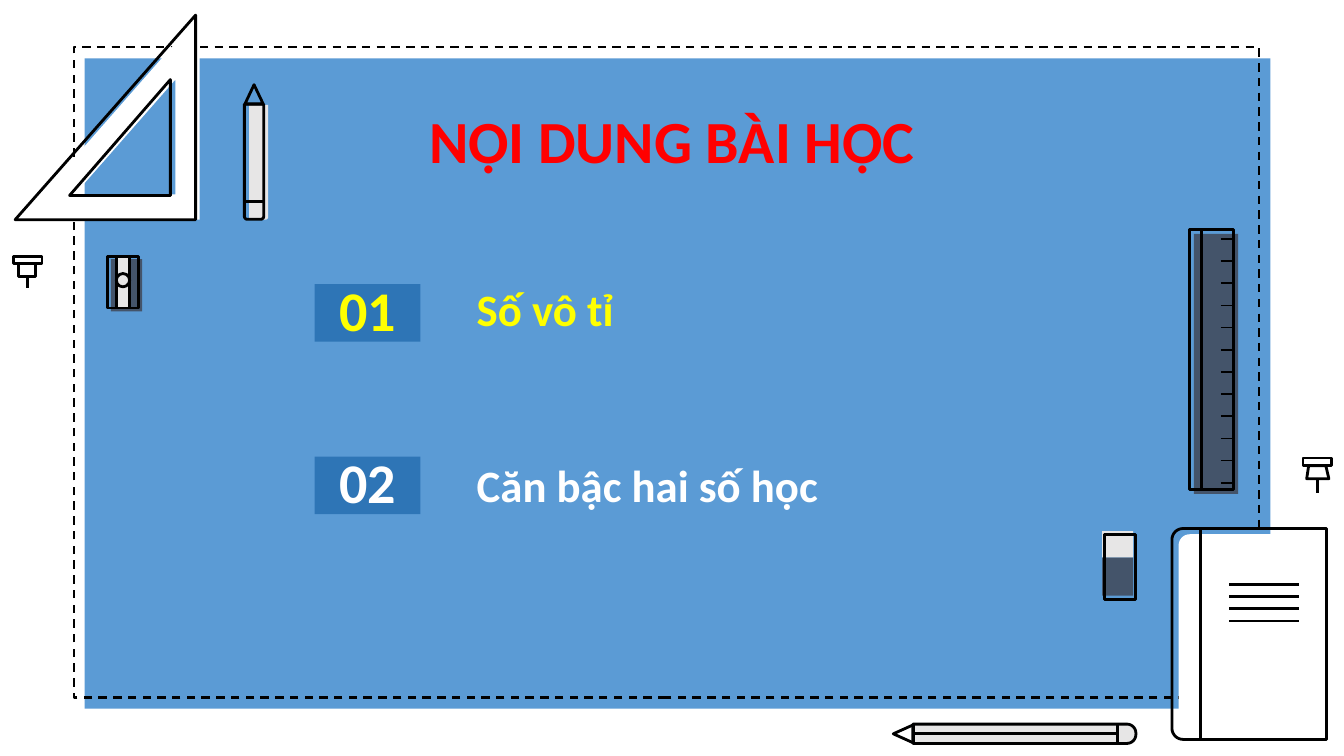
from itertools import chain
from math import cos, pi, sin

from lxml.etree import SubElement
from pptx import Presentation
from pptx.dml.color import RGBColor
from pptx.enum.dml import MSO_LINE
from pptx.enum.shapes import MSO_CONNECTOR, MSO_SHAPE
from pptx.enum.text import MSO_ANCHOR, PP_ALIGN
from pptx.oxml.ns import qn
from pptx.util import Emu, Inches, Pt

THEME = {
    "font": "Calibri",
    "title_size": 42.7, "number_size": 40, "topic_size": 32,
    "panel": "5B9BD5", "badge": "2E75B6", "ink": "000000", "paper": "FFFFFF",
    "slate": "44546A", "silver": "E7E6E6",
    "title": "FF0000", "current": "FFFF00", "other": "FFFFFF",
    "stroke": 2, "tick": 1.25, "dash": 1.5,
}
TITLE = "NỘI DUNG BÀI HỌC"
TITLE_BOX = (1.05, 0.98, 11.23, 0.99)
TOPICS = [
    {"number": "01", "name": "Số vô tỉ", "color": "current",
     "badge": (3.12, 2.82, 1.05, 0.57), "label": (4.63, 2.75, 2.25, 0.64)},
    {"number": "02", "name": "Căn bậc hai số học", "color": "other",
     "badge": (3.12, 4.53, 1.05, 0.57), "label": (4.63, 4.49, 4.41, 0.64)},
]
PANEL = (0.84, 0.58, 11.76, 6.45)
FRAME = (0.73, 0.47, 11.76, 6.45)

SQUARE = (0, 0, 0, 0)
LEFT_ROUND = (0.11, 0, 0, 0.11)
RIGHT_ROUND = (0, 0.09, 0.09, 0)
BOTTOM_ROUND = (0, 0, 0.03, 0.03)

STATIONERY = {
    "notebook": [
        ("fill", (11.69, 5.3, 1.53, 2.09), "paper", LEFT_ROUND),
        ("outline", (11.61, 5.23, 1.56, 2.12), LEFT_ROUND),
        ("line", (11.91, 5.25, 11.91, 7.33)),
        *[("line", (12.19, 5.8 + 0.12 * row, 12.88, 5.8 + 0.12 * row)) for row in range(4)],
    ],
    "eraser": [
        ("fill", (10.93, 5.53, 0.31, 0.38), "slate", SQUARE),
        ("fill", (10.93, 5.27, 0.31, 0.26), "silver", SQUARE),
        ("outline", (10.94, 5.29, 0.34, 0.67), SQUARE),
    ],
    "set square": [
        ("polygon", [[(1.98, 0.15), (1.98, 2.18), (0.2, 2.18)],
                     [(1.74, 0.79), (0.74, 1.93), (1.74, 1.93)]], "paper", None),
        ("polygon", [[(1.94, 0.15), (1.94, 2.18), (0.15, 2.18)],
                     [(1.69, 0.79), (1.69, 1.94), (0.69, 1.94)]], None, "ink"),
    ],
    "pencil": [
        ("fill", (2.47, 1.04, 0.19, 1.14), "silver", BOTTOM_ROUND),
        ("outline", (2.41, 1.02, 0.22, 1.17), BOTTOM_ROUND),
        ("line", (2.42, 2, 2.61, 2)),
        ("polygon", [[(2.52, 0.84), (2.61, 1.03), (2.43, 1.03)]], None, "ink"),
    ],
    "long pencil": [
        ("fill", (9.06, 7.19, 2.21, 0.18), "silver", RIGHT_ROUND),
        ("outline", (9.04, 7.17, 2.24, 0.22), RIGHT_ROUND),
        ("line", (11.08, 7.19, 11.08, 7.37)),
        ("polygon", [[(8.86, 7.28), (9.06, 7.19), (9.06, 7.37)]], None, "ink"),
        ("line", (9.06, 7.28, 11.08, 7.28)),
    ],
    "sharpener": [
        ("fill", (1.1, 2.57, 0.31, 0.52), "slate", SQUARE),
        ("fill", (1.16, 2.54, 0.13, 0.52), "silver", SQUARE),
        ("outline", (1.05, 2.53, 0.34, 0.54), SQUARE),
        ("outline", (1.14, 2.53, 0.16, 0.54), SQUARE),
        ("circle", (1.14, 2.7, 0.16, 0.16)),
    ],
    "left pin": [
        ("outline", (0.12, 2.53, 0.31, 0.1), SQUARE),
        ("outline", (0.17, 2.6, 0.2, 0.16), SQUARE),
        ("line", (0.27, 2.74, 0.27, 2.86)),
    ],
    "right pin": [
        ("outline", (12.91, 4.53, 0.31, 0.1), SQUARE),
        ("polygon", [[(12.98, 4.62), (13.15, 4.62), (13.18, 4.75), (12.96, 4.75)]], None, "ink"),
        ("line", (13.07, 4.75, 13.07, 4.89)),
    ],
    "ruler": [
        ("fill", (11.84, 2.32, 0.44, 2.58), "slate", SQUARE),
        ("outline", (11.78, 2.26, 0.47, 2.61), SQUARE),
        *[("line", (12.11, 2.37 + 0.22 * mark, 12.24, 2.37 + 0.22 * mark), "tick")
          for mark in range(12)],
        ("line", (11.92, 2.27, 11.92, 4.85)),
    ],
}


def color(name):
    return RGBColor.from_string(THEME[name])


def paint(shape, fill=None, line=None, width="stroke"):
    shape.shadow.inherit = False
    if fill:
        shape.fill.solid()
        shape.fill.fore_color.rgb = color(fill)
    else:
        shape.fill.background()
    if line:
        shape.line.color.rgb = color(line)
        shape.line.width = Pt(THEME[width])
    else:
        shape.line.fill.background()
    return shape


def add_preset(shapes, kind, box, **style):
    return paint(shapes.add_shape(kind, *map(Inches, box)), **style)


def add_polygon(shapes, contours, **style):
    scaled = [[(Inches(x), Inches(y)) for x, y in contour] for contour in contours]
    builder = shapes.build_freeform(*scaled[0][0], scale=1.0)
    for index, contour in enumerate(scaled):
        if index:
            builder.move_to(*contour[0])
        builder.add_line_segments(contour[1:], close=True)
    return paint(builder.convert_to_shape(), **style)


def rounded_contour(box, radii, steps=8):
    left, top, width, height = box
    corners = [(left, top, 1, 1), (left + width, top, -1, 1),
               (left + width, top + height, -1, -1), (left, top + height, 1, -1)]
    arcs = []
    for index, ((x, y, across, down), radius) in enumerate(zip(corners, radii)):
        angles = [pi + pi / 2 * (index + step / steps) for step in range(steps + 1)]
        arcs.append([(x + radius * (across + cos(angle)), y + radius * (down + sin(angle)))
                     for angle in (angles if radius else angles[:1])]
                    if radius else [(x, y)])
    return list(chain.from_iterable(arcs))


def add_box(shapes, box, radii, **style):
    if any(radii):
        return add_polygon(shapes, [rounded_contour(box, radii)], **style)
    return add_preset(shapes, MSO_SHAPE.RECTANGLE, box, **style)


def inset(box):
    stroke = THEME["stroke"] / 72
    left, top, width, height = box
    return left + stroke / 2, top + stroke / 2, width - stroke, height - stroke


def add_line(shapes, ends, width="stroke"):
    line = shapes.add_connector(MSO_CONNECTOR.STRAIGHT, *map(Inches, ends))
    line.line.color.rgb = color("ink")
    line.line.width = Pt(THEME[width])
    SubElement(line.element.spPr, qn("a:effectLst"))


def draw_part(shapes, kind, geometry, *options):
    if kind == "fill":
        add_box(shapes, geometry, options[1], fill=options[0])
    elif kind == "outline":
        add_box(shapes, inset(geometry), options[0], line="ink")
    elif kind == "circle":
        add_preset(shapes, MSO_SHAPE.OVAL, inset(geometry), line="ink")
    elif kind == "polygon":
        add_polygon(shapes, geometry, fill=options[0], line=options[1])
    else:
        add_line(shapes, geometry, *options)


def write(shape, text, size, ink, frame_format, paragraph_format):
    frame = shape.text_frame
    frame.text = text
    paragraph = frame.paragraphs[0]
    font_format = {"name": THEME["font"], "size": Pt(THEME[size]), "bold": True}
    for target, values in ((frame, frame_format), (paragraph, paragraph_format),
                           (paragraph.font, font_format)):
        for name, value in values.items():
            setattr(target, name, value)
    paragraph.font.color.rgb = color(ink)


def main():
    presentation = Presentation()
    presentation.slide_width, presentation.slide_height = Inches(13.33), Inches(7.5)
    slide = presentation.slides.add_slide(presentation.slide_layouts[5])
    shapes = slide.shapes
    margins = {f"margin_{side}": Inches(0.13) for side in ("left", "right", "top", "bottom")}
    centered = {"alignment": PP_ALIGN.CENTER, "line_spacing": 0.9}

    add_preset(shapes, MSO_SHAPE.RECTANGLE, PANEL, fill="panel")
    frame = add_preset(shapes, MSO_SHAPE.RECTANGLE, FRAME, line="ink", width="dash")
    frame.line.dash_style = MSO_LINE.DASH

    title = shapes.title
    frame.element.addnext(title.element)
    for name, value in zip(("left", "top", "width", "height"), TITLE_BOX):
        setattr(title, name, Inches(value))
    write(title, TITLE, "title_size", "title",
          {**margins, "vertical_anchor": MSO_ANCHOR.TOP, "word_wrap": True}, centered)

    for parts in STATIONERY.values():
        group = shapes.add_group_shape()
        for part in parts:
            draw_part(group.shapes, *part)

    for topic in TOPICS:
        badge = add_preset(shapes, MSO_SHAPE.RECTANGLE, topic["badge"], fill="badge")
        write(badge, topic["number"], "number_size", topic["color"],
              {**margins, "vertical_anchor": MSO_ANCHOR.MIDDLE, "word_wrap": True}, centered)
        label = shapes.add_textbox(*map(Inches, topic["label"]))
        write(label, topic["name"], "topic_size", topic["color"],
              {"word_wrap": True}, {"alignment": PP_ALIGN.LEFT})

    presentation.save("out.pptx")


if __name__ == "__main__":
    main()
